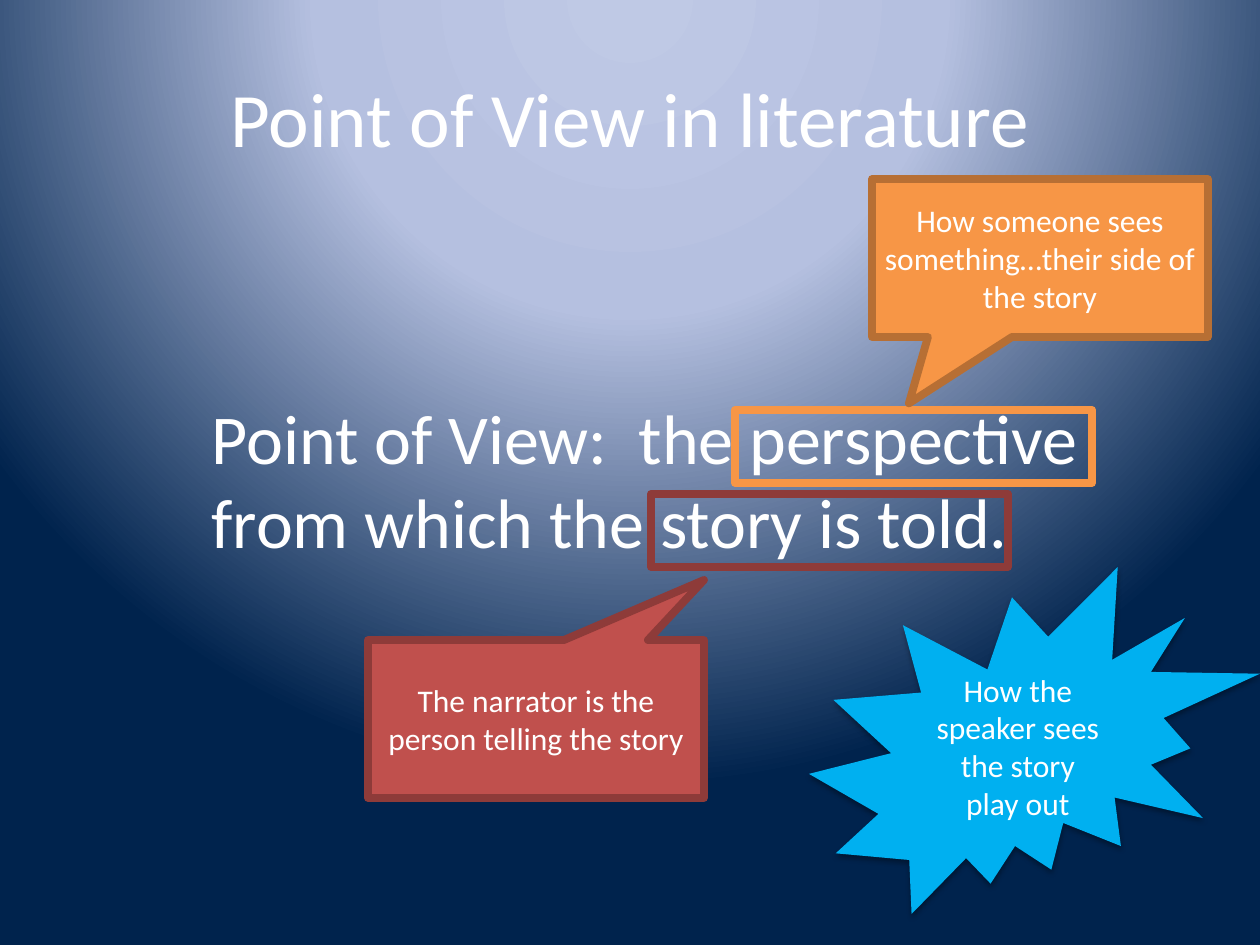
"""Build a slide that explains point of view in literature."""
from dataclasses import dataclass
from typing import Optional

from pptx import Presentation
from pptx import util as u
from pptx.dml.color import RGBColor
from pptx.enum import shapes, text
from pptx.oxml import parse_xml
from pptx.oxml.ns import nsdecls, qn

PX_PER_INCH = 126
FONT = "Calibri"
COLORS = {
    "white": "FFFFFF",
    "orange": "F79646",
    "dark_orange": "B76F34",
    "red": "C0504D",
    "dark_red": "8E3B39",
    "blue": "00B0F0",
    "shadow": "000000",
}
BACKGROUND_STOPS = ((0, "BFC9E5"), (40, "B5C0E0"), (100, "00234D"))


@dataclass(frozen=True)
class Area:
    left: int
    top: int
    width: int
    height: int


@dataclass(frozen=True)
class Caption:
    area: Area
    words: str
    size: int
    centered: bool = False


@dataclass(frozen=True)
class Figure:
    preset: shapes.MSO_SHAPE
    area: Area
    fill: Optional[str] = None
    line: Optional[str] = None
    words: str = ""
    pointer: tuple[float, ...] = ()
    shadow: bool = False


CAPTIONS = (
    Caption(Area(63, 38, 1134, 158), "Point of View in literature", 44, True),
    Caption(
        Area(199, 388, 914, 183),
        "Point of View:  the perspective from which the story is told.",
        40,
    ),
)
FIGURES = (
    Figure(shapes.MSO_SHAPE.RECTANGLE, Area(735, 410, 357, 73), line="orange"),
    Figure(
        shapes.MSO_SHAPE.RECTANGULAR_CALLOUT, Area(872, 179, 336, 158),
        "orange", "dark_orange",
        "How someone sees something…their side of the story", (-0.39, 0.92),
    ),
    Figure(shapes.MSO_SHAPE.RECTANGLE, Area(651, 494, 357, 73), line="dark_red"),
    Figure(
        shapes.MSO_SHAPE.RECTANGULAR_CALLOUT, Area(368, 640, 336, 158),
        "red", "dark_red",
        "The narrator is the person telling the story", (0.5, -0.88),
    ),
    Figure(
        shapes.MSO_SHAPE.EXPLOSION2, Area(809, 567, 451, 347), "blue",
        words="How the speaker sees the story play out", shadow=True,
    ),
)


def px(length: int) -> u.Emu:
    """Turn pixels into EMU."""
    return u.Inches(length / PX_PER_INCH)


def place(area: Area) -> tuple[u.Emu, ...]:
    """Give left, top, width and height in EMU."""
    return tuple(map(px, (area.left, area.top, area.width, area.height)))


def color(name: str) -> RGBColor:
    """Look up a named color."""
    return RGBColor.from_string(COLORS[name])


def write(box, words: str, size: int, centered: bool) -> None:
    """Put one white paragraph into a box."""
    frame = box.text_frame
    frame.word_wrap = True
    if centered:
        frame.vertical_anchor = text.MSO_ANCHOR.MIDDLE
    para = frame.paragraphs[0]
    para.text = words
    para.alignment = text.PP_ALIGN.CENTER if centered else text.PP_ALIGN.LEFT
    para.font.name = FONT
    para.font.size = u.Pt(size)
    para.font.color.rgb = color("white")


def paint_background(page) -> None:
    """Fill the page with a radial gradient centered above it."""
    page.background.fill.gradient()
    stops = "".join(
        f'<a:gs pos="{position * 1000}"><a:srgbClr val="{value}"/></a:gs>'
        for position, value in BACKGROUND_STOPS
    )
    gradient = parse_xml(
        f'<a:gradFill {nsdecls("a")} rotWithShape="1"><a:gsLst>{stops}</a:gsLst>'
        '<a:path path="circle"><a:fillToRect l="50000" t="-80000" r="50000"'
        ' b="180000"/></a:path></a:gradFill>'
    )
    old = page.element.find(f".//{qn('a:gradFill')}")
    old.getparent().replace(old, gradient)


def add_shadow(shape) -> None:
    """Cast a soft shadow straight down."""
    effects = shape.element.spPr.find(qn("a:effectLst"))
    effects.append(parse_xml(
        f'<a:outerShdw {nsdecls("a")} blurRad="{u.Pt(3.1)}" dist="{u.Pt(1.8)}"'
        f' dir="5400000" rotWithShape="0"><a:srgbClr val="{COLORS["shadow"]}">'
        '<a:alpha val="35000"/></a:srgbClr></a:outerShdw>'
    ))


def draw_caption(page, caption: Caption) -> None:
    """Draw a text box."""
    box = page.shapes.add_textbox(*place(caption.area))
    write(box, caption.words, caption.size, caption.centered)


def draw_figure(page, figure: Figure) -> None:
    """Draw a frame, callout or burst."""
    shape = page.shapes.add_shape(figure.preset, *place(figure.area))
    shape.shadow.inherit = False
    for index, value in enumerate(figure.pointer):
        shape.adjustments[index] = value
    if figure.fill:
        shape.fill.solid()
        shape.fill.fore_color.rgb = color(figure.fill)
    else:
        shape.fill.background()
    if figure.line:
        shape.line.color.rgb = color(figure.line)
        shape.line.width = u.Pt(4.5)
    else:
        shape.line.fill.background()
    if figure.shadow:
        add_shadow(shape)
    if figure.words:
        write(shape, figure.words, 18, True)


def main() -> None:
    """Build and save the deck."""
    deck = Presentation()
    deck.slide_width, deck.slide_height = px(1260), px(945)
    page = deck.slides.add_slide(deck.slide_layouts[6])
    paint_background(page)
    for caption in CAPTIONS:
        draw_caption(page, caption)
    for figure in FIGURES:
        draw_figure(page, figure)
    deck.save("out.pptx")


if __name__ == "__main__":
    main()
